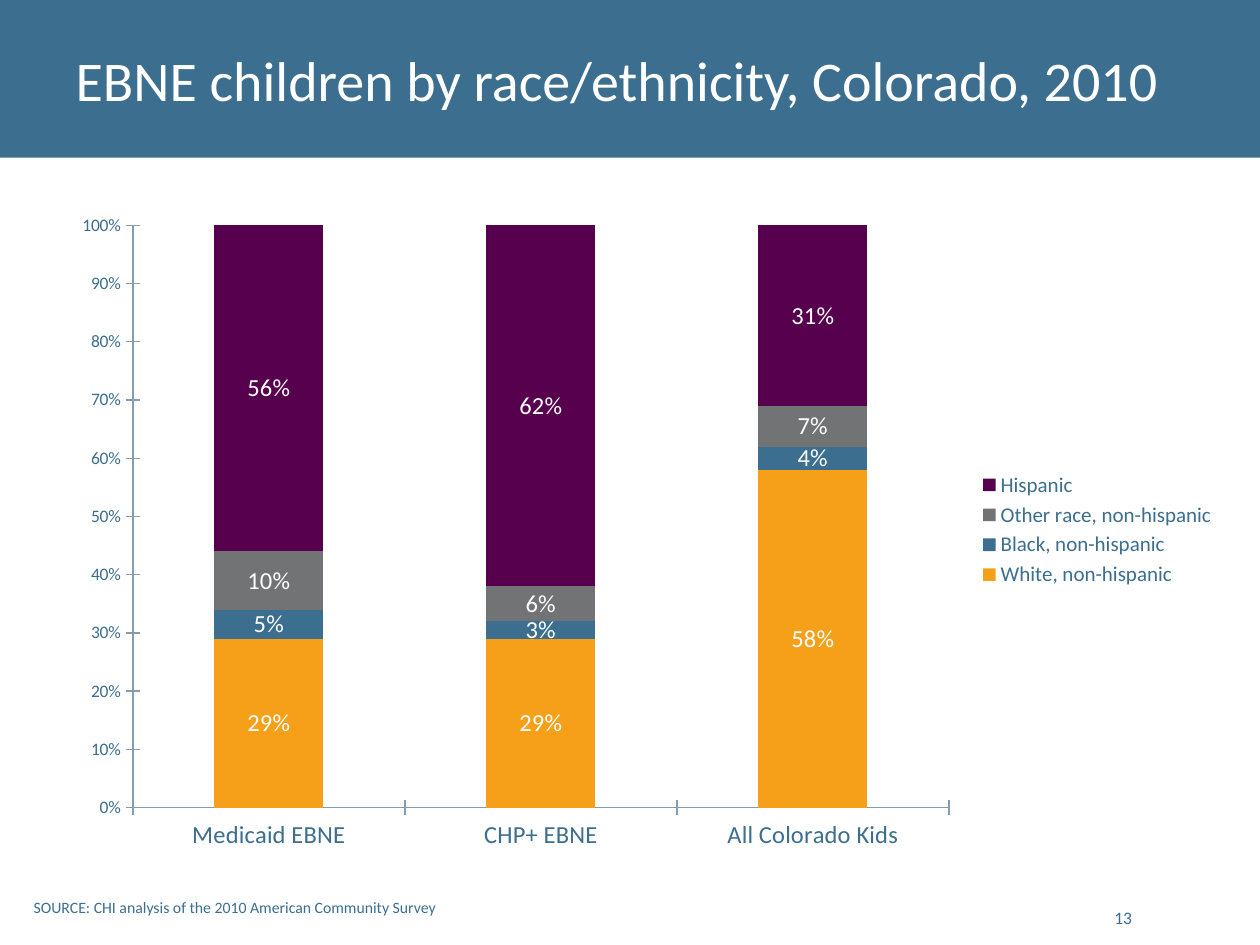
from lxml.etree import SubElement
from pptx import Presentation
from pptx.chart.data import CategoryChartData
from pptx.dml.color import RGBColor
from pptx.enum.chart import XL_CHART_TYPE as ChartType
from pptx.enum.chart import XL_LEGEND_POSITION as LegendPosition
from pptx.enum.chart import XL_TICK_MARK as TickMark
from pptx.enum.shapes import MSO_SHAPE as Preset
from pptx.enum.text import MSO_ANCHOR as Anchor
from pptx.enum.text import MSO_AUTO_SIZE as AutoSize
from pptx.enum.text import PP_ALIGN as Align
from pptx.oxml.ns import qn
from pptx.util import Cm, Pt

BLUE = RGBColor(0x3B, 0x6E, 0x8F)
AXIS_BLUE = RGBColor(0x84, 0x9B, 0xB0)
ORANGE = RGBColor(0xF6, 0xA0, 0x1A)
GRAY = RGBColor(0x71, 0x73, 0x75)
PURPLE = RGBColor(0x56, 0x00, 0x4E)
WHITE = RGBColor(0xFF, 0xFF, 0xFF)

WIDTH, HEIGHT, BAND_HEIGHT = 25.4, 19.05, 3.18

GROUPS = ["Medicaid EBNE", "CHP+ EBNE", "All Colorado Kids"]
SHARES = [
    ("White, non-hispanic", (0.29, 0.29, 0.58), ORANGE),
    ("Black, non-hispanic", (0.05, 0.03, 0.04), BLUE),
    ("Other race, non-hispanic", (0.10, 0.06, 0.07), GRAY),
    ("Hispanic", (0.56, 0.62, 0.31), PURPLE),
]


class SlideBuilder:
    """Holds the slide and its shared style."""

    font_name = "Calibri"
    percent = "0%"

    def __init__(self, slide):
        self.slide = slide

    def style(self, font, size, color=BLUE):
        font.name = self.font_name
        font.size = Pt(size)
        font.color.rgb = color

    def band(self, *box):
        band = self.slide.shapes.add_shape(Preset.RECTANGLE, *map(Cm, box))
        band.shadow.inherit = False
        band.fill.solid()
        band.fill.fore_color.rgb = BLUE
        band.line.fill.background()
        # The band lies behind the title
        self.slide.shapes._spTree.insert(2, band._element)

    def title(self, text, *box):
        title = self.slide.shapes.title
        title.left, title.top, title.width, title.height = map(Cm, box)
        frame = title.text_frame
        frame.text = text
        frame.vertical_anchor = Anchor.MIDDLE
        frame.paragraphs[0].alignment = Align.LEFT
        self.style(frame.paragraphs[0].runs[0].font, 32, WHITE)

    def text(self, text, *box, size, align=Align.LEFT, anchor=Anchor.TOP, wrap=True):
        frame = self.slide.shapes.add_textbox(*map(Cm, box)).text_frame
        frame.text = text
        frame.word_wrap = wrap
        frame.auto_size = AutoSize.NONE if wrap else AutoSize.SHAPE_TO_FIT_TEXT
        frame.vertical_anchor = anchor
        frame.paragraphs[0].alignment = align
        self.style(frame.paragraphs[0].runs[0].font, size)

    def stacked_chart(self, categories, shares, *box):
        data = CategoryChartData(number_format=self.percent)
        data.categories = categories
        for name, values, _ in shares:
            data.add_series(name, values)
        chart = self.slide.shapes.add_chart(
            ChartType.COLUMN_STACKED_100, *map(Cm, box), data
        ).chart
        self.style(chart.font, 10)
        chart.has_title = False

        # Columns and their labels
        plot = chart.plots[0]
        plot.gap_width = 150
        plot.overlap = 100
        plot.vary_by_categories = False
        for series, (_, _, color) in zip(plot.series, shares):
            series.format.fill.solid()
            series.format.fill.fore_color.rgb = color
            labels = series.data_labels
            labels.show_value = True
            labels.number_format = self.percent
            labels.number_format_is_linked = False
            self.style(labels.font, 14, WHITE)

        # Axes
        for axis, size in ((chart.category_axis, 14), (chart.value_axis, 10)):
            axis.has_major_gridlines = False
            axis.major_tick_mark = TickMark.CROSS
            axis.format.line.color.rgb = AXIS_BLUE
            self.style(axis.tick_labels.font, size)
        chart.value_axis.maximum_scale = 1
        chart.value_axis.major_unit = 0.1
        chart.value_axis.tick_labels.number_format = self.percent
        chart.value_axis.tick_labels.number_format_is_linked = False

        # Legend
        chart.has_legend = True
        chart.legend.position = LegendPosition.RIGHT
        chart.legend.include_in_layout = False
        self.style(chart.legend.font, 12)

        self.place_plot(chart, x=0.06, y=0.04, w=0.7, h=0.88)

    @staticmethod
    def place_plot(chart, **fractions):
        plot_area = chart._chartSpace.chart.plotArea
        for old in plot_area.findall(qn("c:layout")):
            plot_area.remove(old)
        layout = SubElement(plot_area, qn("c:layout"))
        plot_area.insert(0, layout)
        manual = SubElement(layout, qn("c:manualLayout"))
        settings = {"layoutTarget": "inner", "xMode": "edge", "yMode": "edge", **fractions}
        for tag, value in settings.items():
            SubElement(manual, qn(f"c:{tag}")).set("val", str(value))


def main():
    deck = Presentation()
    deck.slide_width, deck.slide_height = Cm(WIDTH), Cm(HEIGHT)
    builder = SlideBuilder(deck.slides.add_slide(deck.slide_layouts[5]))

    # Heading
    builder.band(0, 0, WIDTH, BAND_HEIGHT)
    builder.title("EBNE children by race/ethnicity, Colorado, 2010",
                  1.27, 0, 22.86, BAND_HEIGHT)

    # Shares by race and ethnicity
    builder.stacked_chart(GROUPS, SHARES, 1.27, 4.01, 23.5, 13.34)

    # Footer
    builder.text("13", 22.05, 17.81, 1.02, 1.02, size=10,
                 align=Align.RIGHT, anchor=Anchor.BOTTOM)
    builder.text("SOURCE: CHI analysis of the 2010 American Community Survey",
                 0.43, 17.98, 8.69, 0.64, size=9, wrap=False)

    deck.save("out.pptx")


if __name__ == "__main__":
    main()
